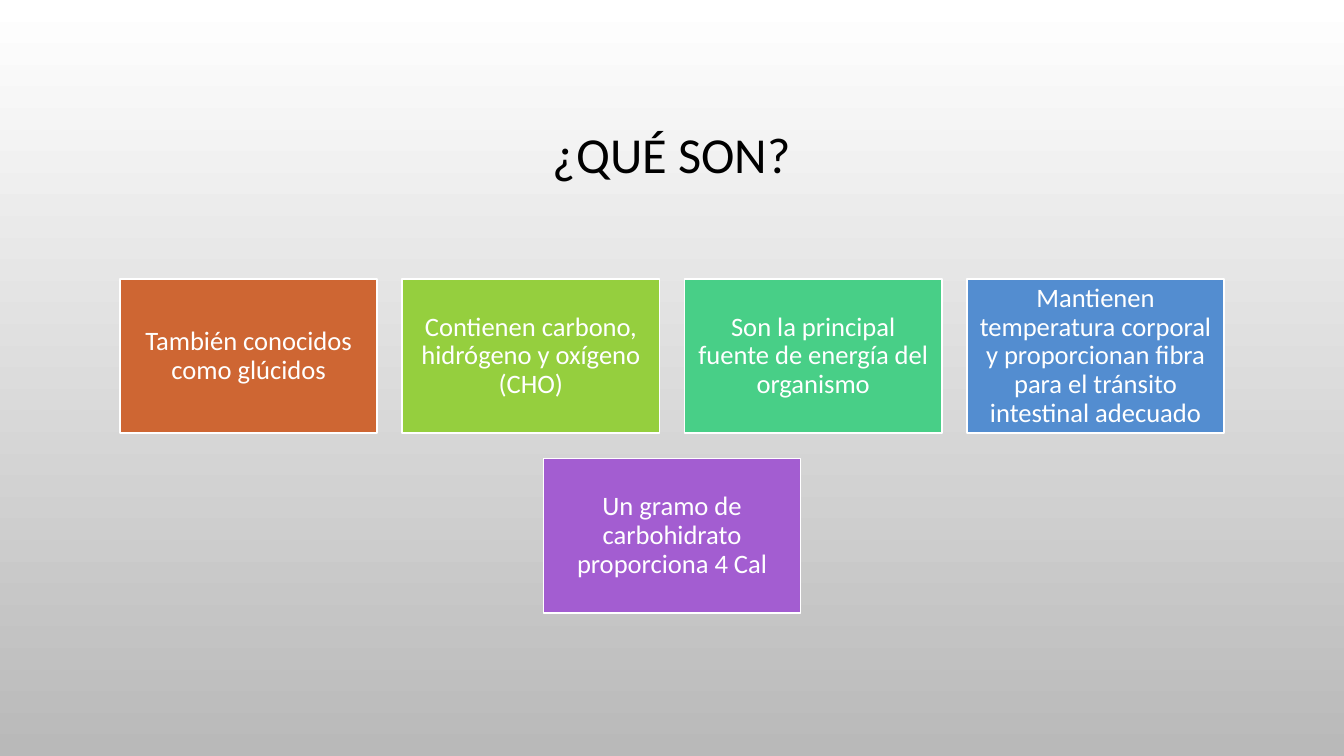
from pptx import Presentation
from pptx.dml.color import RGBColor as Color
from pptx.enum.shapes import MSO_SHAPE as Shape
from pptx.enum.text import MSO_ANCHOR as Anchor, PP_ALIGN as Align
from pptx.util import Inches, Pt

TITLE = "¿QUÉ SON?"
CARD_ROWS = [
    [
        ("También conocidos como glúcidos", "CE6633"),
        ("Contienen carbono, hidrógeno y oxígeno (CHO)", "95CF3E"),
        ("Son la principal fuente de energía del organismo", "48CF87"),
        ("Mantienen temperatura corporal y proporcionan fibra "
         "para el tránsito intestinal adecuado", "538DD0"),
    ],
    [("Un gramo de carbohidrato proporciona 4 Cal", "A35DD1")],
]
THEME = {
    "font": "Calibri",
    "title_size": 36,
    "card_size": 19,
    "title_color": "000000",
    "card_color": "FFFFFF",
    "outline": "FFFFFF",
    "background": ("FFFFFF", "B9B9B9"),
}
SLIDE_WIDTH, SLIDE_HEIGHT = 13.33, 7.5
TITLE_AREA = (1, 0.68, 11.33, 1.75)
CARD_WIDTH, CARD_HEIGHT = 2.55, 1.53
CARD_GAP = 0.25
CARDS_TOP = 2.77


def set_format(target, values):
    for name, value in values.items():
        setattr(target, name, value)


def write_text(box, text, size, color, margin):
    frame = box.text_frame
    set_format(frame, {
        "word_wrap": True,
        "vertical_anchor": Anchor.MIDDLE,
        "margin_left": margin,
        "margin_right": margin,
        "margin_top": margin,
        "margin_bottom": margin,
    })
    para = frame.paragraphs[0]
    set_format(para, {"alignment": Align.CENTER, "line_spacing": 0.9})
    span = para.add_run()
    span.text = text
    set_format(span.font, {"name": THEME["font"], "size": Pt(size)})
    span.font.color.rgb = Color.from_string(color)


def add_card(page, left, top, text, fill):
    area = (left, top, CARD_WIDTH, CARD_HEIGHT)
    card = page.shapes.add_shape(Shape.RECTANGLE, *map(Inches, area))
    card.shadow.inherit = False
    card.fill.solid()
    card.fill.fore_color.rgb = Color.from_string(fill)
    card.line.color.rgb = Color.from_string(THEME["outline"])
    card.line.width = Pt(1.25)
    write_text(card, text, THEME["card_size"], THEME["card_color"], Inches(0.08))


def paint_background(page):
    fill = page.background.fill
    fill.gradient()
    fill.gradient_angle = 270
    for stop, color in zip(fill.gradient_stops, THEME["background"]):
        stop.color.rgb = Color.from_string(color)


def main():
    deck = Presentation()
    deck.slide_width = Inches(SLIDE_WIDTH)
    deck.slide_height = Inches(SLIDE_HEIGHT)
    page = deck.slides.add_slide(deck.slide_layouts[6])
    paint_background(page)

    title = page.shapes.add_textbox(*map(Inches, TITLE_AREA))
    write_text(title, TITLE, THEME["title_size"], THEME["title_color"], Inches(0.1))

    for row, cards in enumerate(CARD_ROWS):
        row_width = len(cards) * (CARD_WIDTH + CARD_GAP) - CARD_GAP
        row_left = (SLIDE_WIDTH - row_width) / 2
        top = CARDS_TOP + row * (CARD_HEIGHT + CARD_GAP)
        for column, (text, fill) in enumerate(cards):
            left = row_left + column * (CARD_WIDTH + CARD_GAP)
            add_card(page, left, top, text, fill)

    deck.save("out.pptx")


if __name__ == "__main__":
    main()
